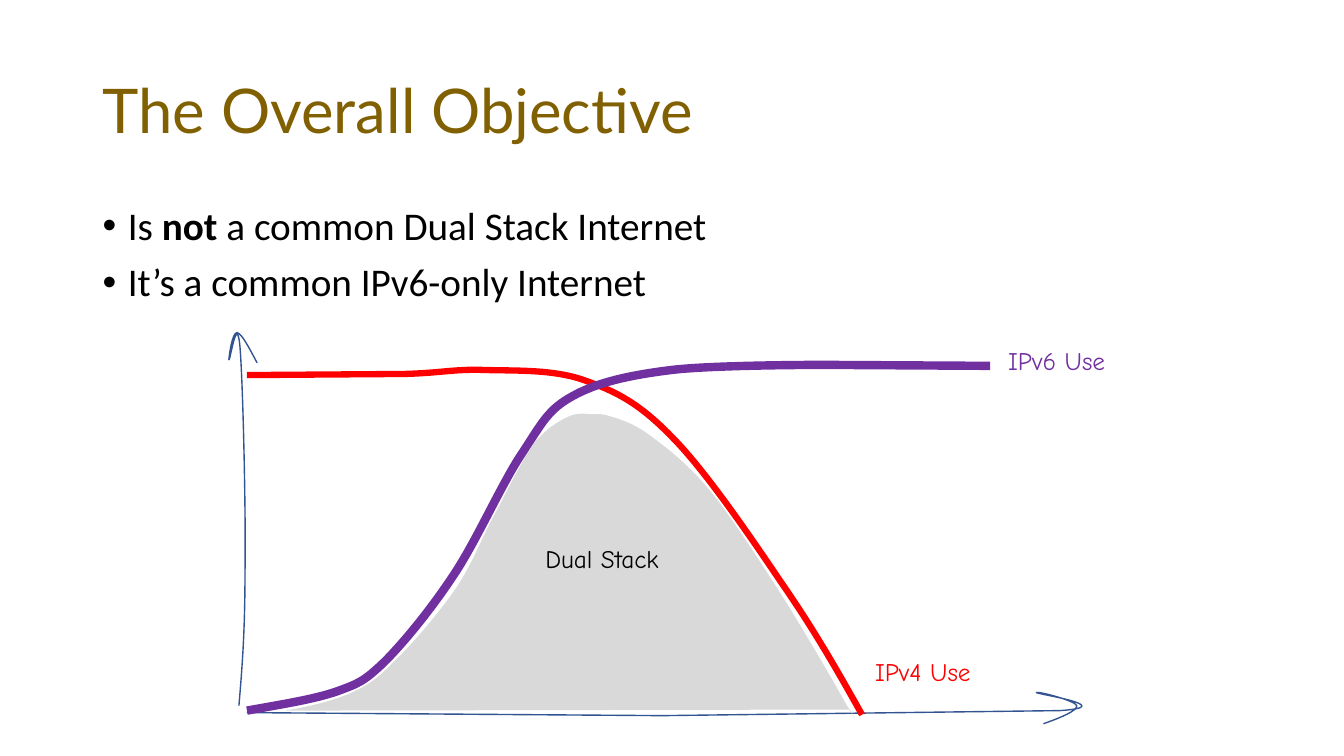
from lxml import etree
from pptx import Presentation
from pptx.dml.color import RGBColor
from pptx.enum.text import MSO_ANCHOR
from pptx.oxml.ns import qn
from pptx.util import Emu, Pt

TOP, MIDDLE = MSO_ANCHOR.TOP, MSO_ANCHOR.MIDDLE
PX = 9144  # EMU per px, 100 px to the inch
SLIDE_SIZE = (1333, 750)

BLACK, GOLD, BLUE = "000000", "806000", "325491"
RED, PURPLE, GREY = "FF0000", "7030A0", "D9D9D9"

# Content: each paragraph is a list of (text, bold) runs
TITLE = [[("The Overall Objective", False)]]
BULLETS = [
    [("Is ", False), ("not", True), (" a common Dual Stack Internet", False)],
    [("It’s a common IPv6-only Internet", False)],
]
LABELS = [  # text, colour, box
    ("IPv6 Use", PURPLE, (990, 338, 140, 40)),
    ("IPv4 Use", RED, (858, 646, 139, 40)),
    ("Dual Stack", BLACK, (531, 534, 163, 40)),
]

# Outlines: a start point, then line ends (x, y) or cubic curves (two controls, end)
TIME_AXIS = [
    (245, 707), (657, 710), (1051, 705),
    (1113, 701, 1025, 688, 1028, 687),
    (1031, 686, 1066, 695, 1068, 700),
    (1069, 705, 1052, 712, 1035, 718),
]
USE_AXIS = [
    (237, 700),
    (240, 664, 243, 628, 243, 568),
    (244, 509, 241, 380, 238, 344),
    (235, 309, 228, 360, 227, 357),
    (227, 355, 230, 330, 235, 330),
    (240, 331, 247, 345, 255, 360),
]
IPV4_CURVE = [
    (245, 372), (258, 372), (401, 371),
    (438, 370, 450, 366, 480, 367),
    (509, 368, 548, 366, 579, 377),
    (610, 388, 633, 399, 666, 433),
    (699, 466, 744, 532, 775, 578),
    (807, 624, 831, 666, 855, 709),
]
IPV6_CURVE = [
    (245, 705),
    (278, 699, 311, 694, 334, 686),
    (356, 678, 361, 676, 381, 657),
    (401, 637, 428, 604, 451, 569),
    (474, 534, 499, 477, 519, 448),
    (538, 419, 544, 406, 568, 393),
    (593, 379, 626, 372, 667, 367),
    (709, 362, 817, 362, 817, 362),
    (982, 363),
]
DUAL_STACK_AREA = [
    (283, 705),
    (306, 701, 328, 696, 347, 688),
    (365, 680, 375, 673, 392, 655),
    (410, 638, 436, 607, 452, 584),
    (468, 560, 477, 536, 488, 515),
    (499, 495, 508, 476, 516, 462),
    (524, 448, 528, 440, 537, 432),
    (545, 423, 559, 415, 567, 412),
    (576, 409, 581, 411, 587, 411),
    (593, 411, 596, 410, 605, 413),
    (615, 416, 626, 419, 642, 430),
    (658, 442, 679, 457, 701, 483),
    (723, 509, 750, 551, 773, 587),
    (796, 623, 829, 680, 840, 700),
    (848, 712), (842, 704),
]
STROKES = [  # outline, colour, points wide
    (TIME_AXIS, BLUE, 1),
    (USE_AXIS, BLUE, 1),
    (IPV4_CURVE, RED, 4.5),
    (IPV6_CURVE, PURPLE, 6),
]


def px(length):
    return Emu(length * PX)


def color(hex_string):
    return RGBColor.from_string(hex_string)


def add_outline(page, outline):
    """Draw straight segments, then bend those that carry control points."""
    ends = [segment[-2:] for segment in outline]
    left = min(x for x, y in ends)
    top = min(y for x, y in ends)
    builder = page.shapes.build_freeform(*ends[0], scale=PX)
    builder.add_line_segments(ends[1:], close=False)
    shape = builder.convert_to_shape()
    shape.shadow.inherit = False
    lines = list(shape._element.iter(qn("a:lnTo")))
    for line, segment in zip(lines, outline[1:]):
        if len(segment) == 2:
            continue
        line.tag = qn("a:cubicBezTo")
        for index in (0, 2):
            control = etree.Element(qn("a:pt"))
            control.set("x", str(segment[index] - left))
            control.set("y", str(segment[index + 1] - top))
            line.insert(index // 2, control)
    return shape


def add_stroke(page, outline, hex_string, width):
    shape = add_outline(page, outline)
    shape.fill.background()
    shape.line.color.rgb = color(hex_string)
    shape.line.width = Pt(width)


def add_text(page, place, paragraphs, font, size, hex_string, anchor=TOP):
    box = page.shapes.add_textbox(*map(px, place))
    frame = box.text_frame
    frame.word_wrap = True
    frame.vertical_anchor = anchor
    for index, runs in enumerate(paragraphs):
        para = frame.paragraphs[0] if index == 0 else frame.add_paragraph()
        for text, bold in runs:
            span = para.add_run()
            span.text = text
            span.font.name = font
            span.font.size = Pt(size)
            span.font.bold = bold
            span.font.color.rgb = color(hex_string)
    return frame


def add_bullet(para):
    properties = para._p.get_or_add_pPr()
    properties.set("marL", str(px(25)))
    properties.set("indent", str(-px(25)))
    etree.SubElement(properties, qn("a:buFont")).set("typeface", "Arial")
    etree.SubElement(properties, qn("a:buChar")).set("char", "•")


def main():
    deck = Presentation()
    deck.slide_width, deck.slide_height = map(px, SLIDE_SIZE)
    page = deck.slides.add_slide(deck.slide_layouts[6])

    # Title and bullets
    title = add_text(page, (92, 40, 1150, 145), TITLE, "Lato", 44, GOLD, MIDDLE)
    title.paragraphs[0].line_spacing = 0.9
    body = add_text(page, (92, 200, 1150, 476), BULLETS, "Calibri", 28, BLACK)
    for para in body.paragraphs:
        para.line_spacing = 0.9
        para.space_before = Pt(10)
        add_bullet(para)

    # Axes and use curves
    for outline, hex_string, width in STROKES:
        add_stroke(page, outline, hex_string, width)

    # Shared area under both curves
    area = add_outline(page, DUAL_STACK_AREA)
    area.fill.solid()
    area.fill.fore_color.rgb = color(GREY)
    area.line.fill.background()

    # Labels
    for text, hex_string, place in LABELS:
        add_text(page, place, [[(text, False)]], "Comic Neue", 18, hex_string)

    deck.save("out.pptx")


if __name__ == "__main__":
    main()
